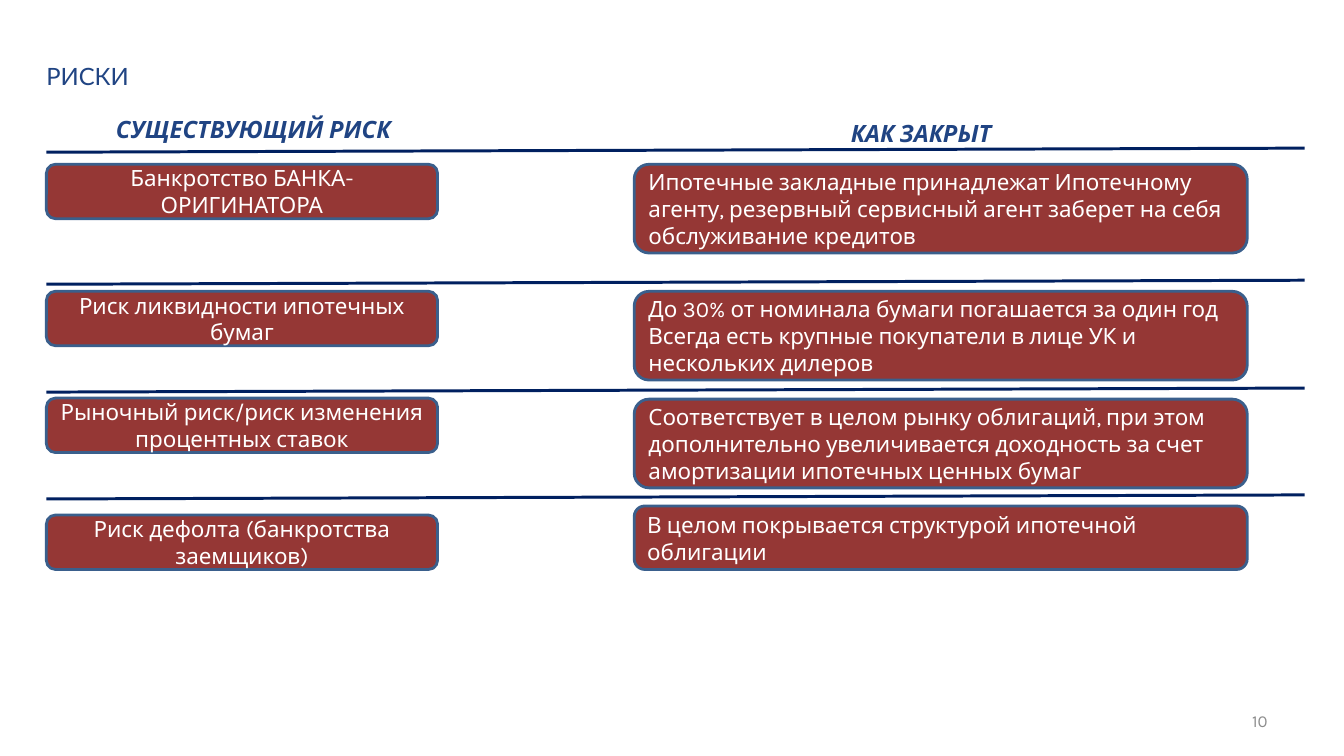
from lxml.etree import SubElement
from pptx import Presentation
from pptx.dml.color import RGBColor
from pptx.enum.shapes import MSO_CONNECTOR, MSO_SHAPE
from pptx.enum.text import MSO_ANCHOR, PP_ALIGN
from pptx.oxml.ns import qn
from pptx.util import Inches, Pt

COLORS = {
    "heading": "204483",
    "rule": "002060",
    "box": "953735",
    "border": "3A5F8C",
    "white": "FFFFFF",
    "gray": "8C8C8C",
}
LEFT, RIGHT = 0.46, 12.94
RISK_W, RISK_H = 3.88, 0.54
ANSWER_X, ANSWER_W = 6.29, 6.08

# Rule top, risk text and top, answer paragraphs, top and height
ROWS = [
    (1.47, "Банкротство БАНКА-ОРИГИНАТОРА", 1.63,
     ["Ипотечные закладные принадлежат Ипотечному агенту, резервный "
      "сервисный агент заберет на себя обслуживание кредитов"], 1.63, 0.88),
    (2.78, "Риск ликвидности ипотечных бумаг", 2.89,
     ["До 30% от номинала бумаги погашается за один год",
      "Всегда есть крупные покупатели в лице УК и нескольких дилеров"],
     2.89, 0.88),
    (3.85, "Рыночный риск/риск изменения процентных ставок", 3.95,
     ["Соответствует в целом рынку облигаций, при этом дополнительно "
      "увеличивается доходность за счет амортизации ипотечных ценных бумаг"],
     3.96, 0.88),
    (4.91, "Риск дефолта (банкротства заемщиков)", 5.11,
     ["В целом покрывается структурой ипотечной облигации"], 5.02, 0.63),
]


def rgb(name):
    return RGBColor.from_string(COLORS[name])


def write(sp, paragraphs, size=16, font="Karla", color="white", emphasis=False,
          align=PP_ALIGN.LEFT, spacing=None):
    tf = sp.text_frame
    tf.word_wrap = True
    tf.vertical_anchor = MSO_ANCHOR.MIDDLE
    for i, text in enumerate(paragraphs):
        p = tf.add_paragraph() if i else tf.paragraphs[0]
        p.alignment = align
        if spacing:
            p.line_spacing = spacing
        r = p.add_run()
        r.text = text
        r.font.size = Pt(size)
        r.font.name = font
        r.font.bold = r.font.italic = emphasis
        r.font.color.rgb = rgb(color)


def add_text(s, text, x, y, w, h, inset=True, **fmt):
    sp = s.shapes.add_textbox(Inches(x), Inches(y), Inches(w), Inches(h))
    if not inset:
        tf = sp.text_frame
        tf.margin_left = tf.margin_right = tf.margin_top = tf.margin_bottom = 0
    write(sp, [text], **fmt)


def add_box(s, paragraphs, x, y, w, h, **fmt):
    sp = s.shapes.add_shape(MSO_SHAPE.ROUNDED_RECTANGLE,
                            Inches(x), Inches(y), Inches(w), Inches(h))
    sp.shadow.inherit = False
    sp.fill.solid()
    sp.fill.fore_color.rgb = rgb("box")
    sp.line.color.rgb = rgb("border")
    sp.line.width = Pt(2)
    write(sp, paragraphs, **fmt)


def add_rule(s, y):
    line = s.shapes.add_connector(MSO_CONNECTOR.STRAIGHT, Inches(LEFT),
                                  Inches(y + 0.04), Inches(RIGHT), Inches(y))
    line.line.color.rgb = rgb("rule")
    line.line.width = Pt(2.13)
    SubElement(line._element.spPr, qn("a:effectLst"))


def main():
    prs = Presentation()
    prs.slide_width, prs.slide_height = Inches(13.33), Inches(7.5)
    s = prs.slides.add_slide(prs.slide_layouts[6])

    # Title and column headings
    heading = {"size": 17, "color": "heading", "inset": False}
    add_text(s, "РИСКИ", LEFT, 0.59, 8.23, 0.37, font="Lato", spacing=0.9,
             **heading)
    add_text(s, "СУЩЕСТВУЮЩИЙ РИСК", 1.15, 1.13, 3.4, 0.34, emphasis=True,
             spacing=0.9, **heading)
    add_text(s, "КАК ЗАКРЫТ", 8.44, 1.22, 2.32, 0.25, emphasis=True,
             spacing=0.8, **heading)

    # Risks and how each one is covered
    for rule_y, risk, risk_y, answer, answer_y, answer_h in ROWS:
        add_rule(s, rule_y)
        add_box(s, [risk], LEFT, risk_y, RISK_W, RISK_H, align=PP_ALIGN.CENTER)
        add_box(s, answer, ANSWER_X, answer_y, ANSWER_W, answer_h)

    # Page number
    add_text(s, "10", 9.56, 6.95, 3.11, 0.4, size=12, color="gray",
             align=PP_ALIGN.RIGHT)

    prs.save("out.pptx")


if __name__ == "__main__":
    main()
